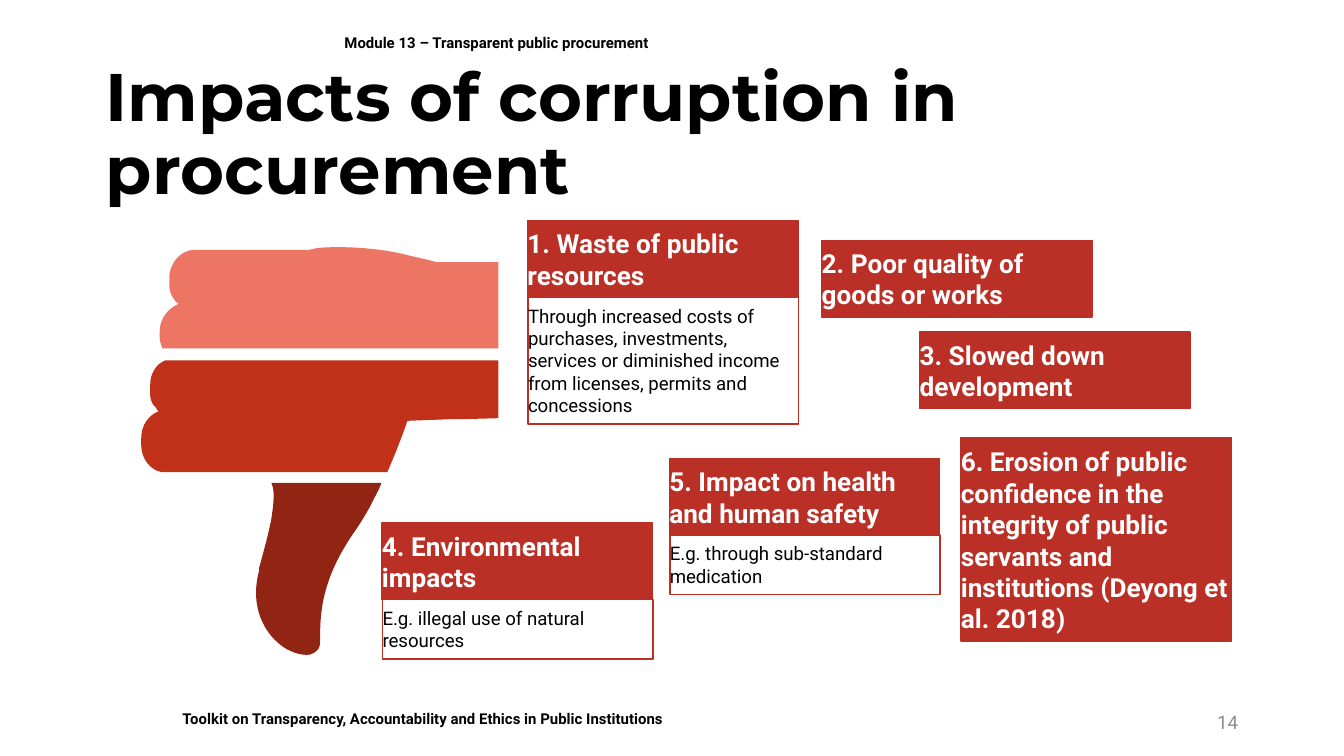
from dataclasses import dataclass

from pptx import Presentation
from pptx.dml.color import RGBColor
from pptx.enum.shapes import MSO_SHAPE
from pptx.enum.text import MSO_ANCHOR, MSO_AUTO_SIZE, PP_ALIGN
from pptx.oxml.ns import qn
from pptx.util import Cm, Pt

RECTANGLE = MSO_SHAPE.RECTANGLE
TOP, MIDDLE, BOTTOM = MSO_ANCHOR.TOP, MSO_ANCHOR.MIDDLE, MSO_ANCHOR.BOTTOM
LEFT, RIGHT = PP_ALIGN.LEFT, PP_ALIGN.RIGHT
FIXED, GROW = MSO_AUTO_SIZE.NONE, MSO_AUTO_SIZE.SHAPE_TO_FIT_TEXT
TITLE_ONLY = 5


@dataclass(frozen=True)
class Theme:
    title_font: str = "Montserrat"
    body_font: str = "Roboto"
    title_size: float = 36
    heading_size: float = 14
    body_size: float = 10
    small_size: float = 8
    black: str = "000000"
    white: str = "FFFFFF"
    grey: str = "8C8C8C"
    accent: str = "BA3026"
    fingers: str = "EC7663"
    palm: str = "C13018"
    thumb: str = "912412"


THEME = Theme()

# All lengths are in centimetres.
CARD_WIDTH, HEADING_HEIGHT = 5.11, 1.45
BODY_SHIFT = 0.01

# Left, top, heading height, heading, body height, body
CARDS = [
    (12.65, 8.66, HEADING_HEIGHT, "5. Impact on health and human safety",
     1.12, "E.g. through sub-standard medication"),
    (18.16, 8.27, 3.84, "6. Erosion of public confidence in the integrity of public "
     "servants and institutions (Deyong et al. 2018)", 0, ""),
    (15.53, 4.54, HEADING_HEIGHT, "2. Poor quality of goods or works", 0, ""),
    (17.38, 6.27, HEADING_HEIGHT, "3. Slowed down development", 0, ""),
    (7.22, 9.88, HEADING_HEIGHT, "4. Environmental impacts",
     1.12, "E.g. illegal use of natural resources"),
    (9.97, 4.17, HEADING_HEIGHT, "1. Waste of public resources",
     2.39, "Through increased costs of purchases, investments, services or "
     "diminished income from licenses, permits and concessions"),
]

# Each outline is a start point, then lines (x, y) and Bézier curves (three points).
PALM = [
    (7.7, 7.95), (8.48, 7.92), (8.69, 7.92), (9.42, 7.9), (9.42, 7.7), (9.42, 7.47),
    (9.42, 6.81), (3.12, 6.81),
    (2.95, 6.88, 2.84, 7.06, 2.84, 7.26), (2.84, 7.39),
    (2.84, 7.42, 2.84, 7.44, 2.84, 7.47),
    (2.84, 7.47, 2.84, 7.62, 2.95, 7.7),
    (2.95, 7.72, 2.97, 7.75, 3, 7.77),
    (2.79, 7.85, 2.67, 8.05, 2.67, 8.28), (2.67, 8.41),
    (2.67, 8.66, 2.84, 8.89, 3.07, 8.92), (7.32, 8.92),
    (7.52, 8.46, 7.65, 8.1, 7.7, 7.95),
]
FINGERS = [
    (9.42, 6.58), (9.42, 5.59), (9.42, 5.36), (9.42, 4.95), (8.69, 4.95), (8.48, 4.95),
    (8.23, 4.95),
    (8.2, 4.93, 7.95, 4.88, 7.62, 4.8),
    (7.29, 4.72, 6.83, 4.67, 6.43, 4.67),
    (6.2, 4.67, 6.02, 4.67, 5.84, 4.72), (4.78, 4.72), (4.57, 4.72), (3.68, 4.72),
    (3.43, 4.72, 3.2, 4.95, 3.2, 5.26), (3.2, 5.36),
    (3.2, 5.36, 3.2, 5.51, 3.25, 5.59),
    (3.28, 5.64, 3.33, 5.72, 3.38, 5.74),
    (3.18, 5.82, 3.02, 6.02, 3.02, 6.25), (3.02, 6.38),
    (3.02, 6.45, 3.05, 6.53, 3.07, 6.58), (9.42, 6.58),
]
THUMB = [
    (5.13, 9.12), (5.18, 9.22, 5.18, 9.37, 5.16, 9.58), (5.13, 9.8),
    (5.08, 10.06, 5, 10.36, 4.9, 10.72), (4.9, 10.77),
    (4.7, 11.51, 5.05, 11.96, 5.23, 12.12),
    (5.38, 12.27, 5.61, 12.37, 5.79, 12.37),
    (5.84, 12.37, 5.89, 12.37, 5.92, 12.34),
    (6.02, 12.29, 6.05, 12.22, 6.05, 12.12),
    (6.05, 11.63, 6.05, 10.97, 6.71, 10.03),
    (6.76, 9.96, 6.81, 9.88, 6.86, 9.8), (6.99, 9.58),
    (7.06, 9.42, 7.16, 9.27, 7.21, 9.12), (5.13, 9.12),
]


def write_text(shape, text, *, size, color, font=THEME.body_font, bold=False,
               align=LEFT, anchor=TOP, fit=FIXED, side_inset=0.25,
               line_spacing=1.0):
    frame = shape.text_frame
    frame.word_wrap = True
    frame.auto_size = fit
    frame.vertical_anchor = anchor
    frame.margin_left = frame.margin_right = Cm(side_inset)
    frame.margin_top = frame.margin_bottom = Cm(0.13)
    paragraph = frame.paragraphs[0]
    paragraph.text = text
    paragraph.alignment = align
    paragraph.line_spacing = line_spacing
    paragraph.font.name = font
    paragraph.font.size = Pt(size)
    paragraph.font.bold = bold
    paragraph.font.color.rgb = RGBColor.from_string(color)


def bend_segments(shape, segments):
    """Turn the straight segments that have control points into Bézier curves."""
    lines = shape._element.xpath(".//a:lnTo")
    for line, segment in zip(lines, segments):
        if len(segment) == 2:
            continue
        line.tag = qn("a:cubicBezTo")
        for index in (0, 1):
            x, y = segment[2 * index:2 * index + 2]
            line.insert(index, line.makeelement(qn("a:pt"), {
                "x": str(Cm(x) - shape.left), "y": str(Cm(y) - shape.top)}))


class SlideBuilder:
    def __init__(self, slide, theme):
        self.slide = slide
        self.theme = theme

    def title(self, text, left, top, width, height):
        shape = self.slide.shapes.title
        shape.left, shape.top = Cm(left), Cm(top)
        shape.width, shape.height = Cm(width), Cm(height)
        write_text(shape, text, font=self.theme.title_font, size=self.theme.title_size,
                   color=self.theme.black, bold=True, anchor=MIDDLE, line_spacing=0.9)

    def label(self, text, left, top, width, height, **text_format):
        box = self.slide.shapes.add_textbox(Cm(left), Cm(top), Cm(width), Cm(height))
        write_text(box, text, **text_format)

    def outline(self, container, outline, color):
        start, *segments = outline
        builder = container.build_freeform(Cm(start[0]), Cm(start[1]))
        builder.add_line_segments(
            [(Cm(segment[-2]), Cm(segment[-1])) for segment in segments], close=True)
        shape = builder.convert_to_shape()
        bend_segments(shape, segments)
        shape.shadow.inherit = False
        shape.fill.solid()
        shape.fill.fore_color.rgb = RGBColor.from_string(color)
        shape.line.fill.background()

    def box(self, container, text, left, top, width, height, fill=None, line=None,
            **text_format):
        shape = container.add_shape(RECTANGLE, Cm(left), Cm(top), Cm(width), Cm(height))
        shape.shadow.inherit = False
        if fill:
            shape.fill.solid()
            shape.fill.fore_color.rgb = RGBColor.from_string(fill)
        else:
            shape.fill.background()
        if line:
            shape.line.color.rgb = RGBColor.from_string(line)
            shape.line.width = Pt(0.75)
        else:
            shape.line.fill.background()
        write_text(shape, text, fit=GROW, **text_format)

    def card(self, left, top, heading_height, heading, body_height, body):
        theme = self.theme
        shapes = self.slide.shapes
        container = shapes.add_group_shape().shapes if body else shapes
        self.box(container, heading, left, top, CARD_WIDTH, heading_height,
                 fill=theme.accent, line=theme.accent, size=theme.heading_size,
                 color=theme.white, bold=True, anchor=BOTTOM, side_inset=0)
        if body:
            self.box(container, body, left + BODY_SHIFT, top + heading_height,
                     CARD_WIDTH, body_height, line=theme.accent,
                     size=theme.body_size, color=theme.black, side_inset=0)


def main():
    presentation = Presentation()
    presentation.slide_width, presentation.slide_height = Cm(25.4), Cm(14.28)
    slide = presentation.slides.add_slide(presentation.slide_layouts[TITLE_ONLY])
    builder = SlideBuilder(slide, THEME)
    small = {"size": THEME.small_size, "color": THEME.black, "bold": True}

    builder.box(slide.shapes,
                "Toolkit on Transparency, Accountability and Ethics in Public Institutions",
                3.2, 13.28, 18.21, 0.61, fill=THEME.white, **small)
    builder.label("Module 13 – Transparent public procurement",
                  6.26, 0.25, 17.4, 1.12, anchor=MIDDLE, **small)
    builder.label("14", 17.93, 13.25, 5.72, 0.76, size=THEME.body_size,
                  color=THEME.grey, align=RIGHT, anchor=MIDDLE)
    builder.title("Impacts of corruption in procurement", 1.75, 1.62, 21.89, 1.9)
    hand = slide.shapes.add_group_shape().shapes
    for outline, color in ((PALM, THEME.palm), (FINGERS, THEME.fingers),
                           (THUMB, THEME.thumb)):
        builder.outline(hand, outline, color)
    for card in CARDS:
        builder.card(*card)

    presentation.save("out.pptx")


if __name__ == "__main__":
    main()
